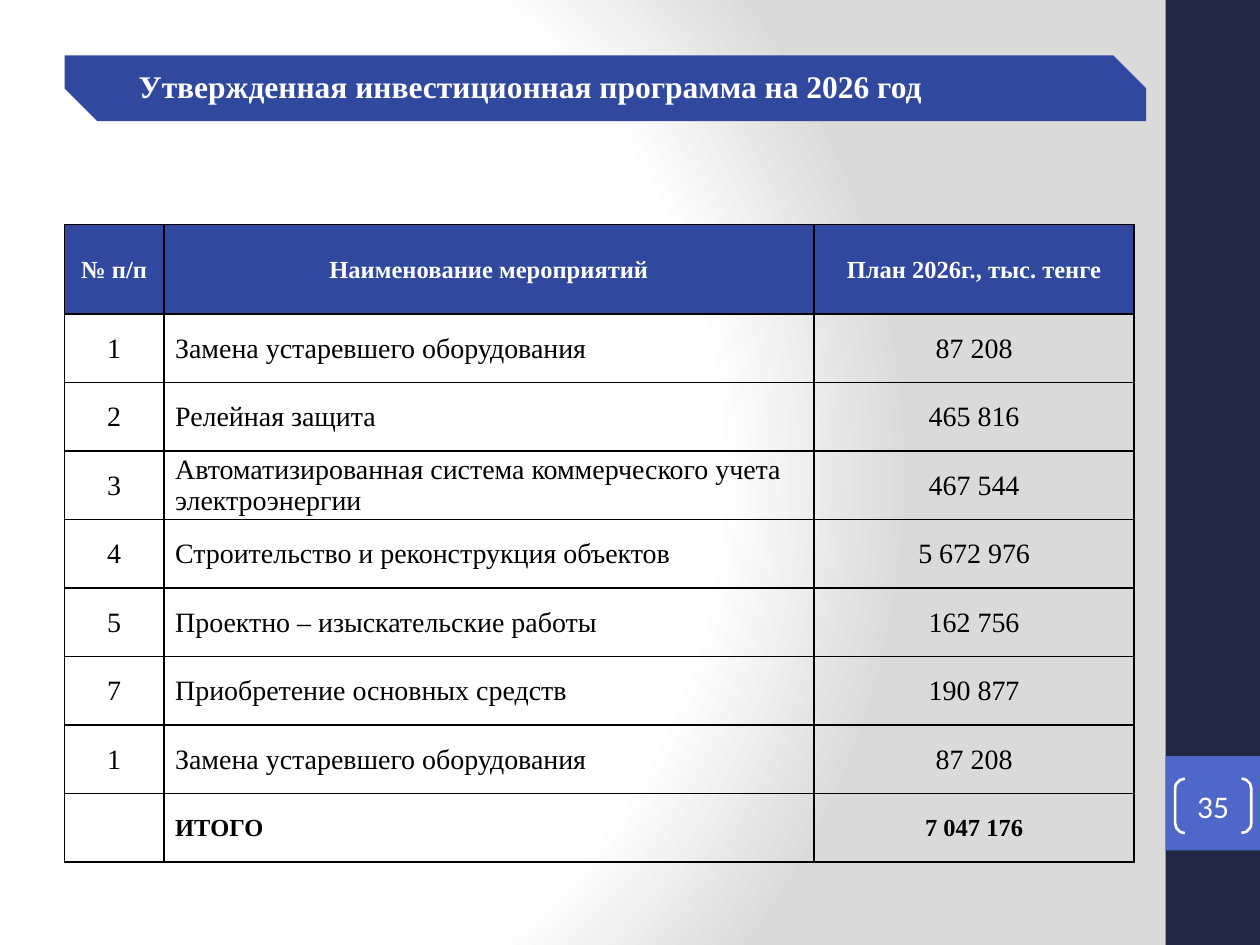
from pptx import Presentation
from pptx.dml.color import RGBColor as Rgb
from pptx.enum.shapes import MSO_SHAPE as Geo
from pptx.enum.text import MSO_ANCHOR as Anchor, PP_ALIGN as Align
from pptx.oxml import parse_xml as to_xml
from pptx.oxml.ns import nsdecls
from pptx.util import Pt

HUES = {"white": "FFFFFF", "gray": "DADADA", "navy": "212745",
        "blue": "4E67C8", "royal": "31489F", "black": "000000"}
SERIF = "Times New Roman"
HEAD = {"name": SERIF, "size": Pt(14), "bold": True, "hue": "white"}
BODY = {"name": SERIF, "size": Pt(16), "bold": False, "hue": "black"}
TOTAL = {**HEAD, "hue": "black"}
TITLE = {**HEAD, "size": Pt(18)}
PAGE = {"name": "Calibri", "size": Pt(18), "hue": "white"}

HEADS = ("№ п/п", "Наименование мероприятий", "План 2026г., тыс. тенге")
WORKS = [
    ("1", "Замена устаревшего оборудования", "87 208"),
    ("2", "Релейная защита", "465 816"),
    ("3", "Автоматизированная система коммерческого учета электроэнергии", "467 544"),
    ("4", "Строительство и реконструкция объектов", "5 672 976"),
    ("5", "Проектно – изыскательские работы", "162 756"),
    ("7", "Приобретение основных средств", "190 877"),
    ("1", "Замена устаревшего оборудования", "87 208"),
]
SUM = ("", "ИТОГО", "7 047 176")


def put(item, vals):
    for key, val in vals.items():
        setattr(item, key, val)


class Deck:
    def __init__(self, wide, high):
        self.prs = Presentation()
        put(self.prs, {"slide_width": Pt(wide), "slide_height": Pt(high)})
        self.slide = self.prs.slides.add_slide(self.prs.slide_layouts[6])

    def ground(self, stops, rect):
        """Fill the background with a circular gradient; rect is in percent."""
        marks = "".join(f'<a:gs pos="{pos * 1000}"><a:srgbClr val="{HUES[hue]}"/></a:gs>'
                        for pos, hue in stops)
        sides = " ".join(f'{side}="{val * 1000}"' for side, val in zip("ltrb", rect))
        self.slide._element.cSld.insert(0, to_xml(
            f'<p:bg {nsdecls("p", "a")}><p:bgPr><a:gradFill rotWithShape="1">'
            f'<a:gsLst>{marks}</a:gsLst><a:path path="circle"><a:fillToRect {sides}/></a:path>'
            '</a:gradFill><a:effectLst/></p:bgPr></p:bg>'))

    def shape(self, geo, box, fill=None, line=None, adj=()):
        item = self.slide.shapes.add_shape(geo, *map(Pt, box))
        item.shadow.inherit = False
        for num, val in enumerate(adj):
            item.adjustments[num] = val
        if fill:
            item.fill.solid()
            item.fill.fore_color.rgb = Rgb.from_string(HUES[fill])
        else:
            item.fill.background()
        if line:
            item.line.color.rgb = Rgb.from_string(HUES[line])
            item.line.width = Pt(1.5)
        else:
            item.line.fill.background()
        return item

    def text(self, frame, words, look, align=Align.CENTER):
        para = frame.paragraphs[0]
        para.alignment = align
        run = para.add_run()
        run.text = words
        put(run.font, {key: val for key, val in look.items() if key != "hue"})
        run.font.color.rgb = Rgb.from_string(HUES[look["hue"]])
        return para

    def label(self, item, words, look, align=Align.CENTER, pad=(0, 0)):
        frame = item.text_frame
        side, edge = map(Pt, pad)
        put(frame, {"word_wrap": True, "vertical_anchor": Anchor.MIDDLE,
                    "margin_left": side, "margin_right": side,
                    "margin_top": edge, "margin_bottom": edge})
        return self.text(frame, words, look, align)

    def cell(self, cell, words, look, left, fill):
        put(cell, {"vertical_anchor": Anchor.MIDDLE, "margin_left": Pt(6.5 if left else 0.7),
                   "margin_right": Pt(0.7), "margin_top": Pt(0.7), "margin_bottom": 0})
        if words:
            self.text(cell.text_frame, words, look, Align.LEFT if left else Align.CENTER)
        props = cell._tc.get_or_add_tcPr()
        for side in "LRTB":
            props.append(to_xml(
                f'<a:ln{side} {nsdecls("a")} w="{Pt(1)}"><a:solidFill>'
                f'<a:srgbClr val="{HUES["black"]}"/></a:solidFill></a:ln{side}>'))
        if fill:
            cell.fill.solid()
            cell.fill.fore_color.rgb = Rgb.from_string(HUES[fill])
        else:
            cell.fill.background()

    def table(self, spot, cols, highs, rows):
        """Draw rows given as (texts, look, fill)."""
        grid = self.slide.shapes.add_table(
            len(rows), len(cols), *map(Pt, (*spot, sum(cols), sum(highs)))).table
        put(grid, {"first_row": False, "horz_banding": False})
        for col, wide in zip(grid.columns, cols):
            col.width = Pt(wide)
        for row, high, (texts, look, fill) in zip(grid.rows, highs, rows):
            row.height = Pt(high)
            for num, words in enumerate(texts):
                self.cell(row.cells[num], words, look, num == 1 and not fill, fill)


def main():
    deck = Deck(720, 540)
    deck.ground([(0, "white"), (75, "white"), (100, "gray")], (20, 50, 100, 50))
    deck.shape(Geo.RECTANGLE, (666, 0, 54, 540), "navy")
    deck.shape(Geo.RECTANGLE, (666, 432, 54, 54), "blue")
    page = deck.shape(Geo.DOUBLE_BRACKET, (671.5, 445, 43.5, 31), line="white", adj=[0.18])
    deck.label(page, "35", PAGE)

    rows = [(HEADS, HEAD, "royal"), *((work, BODY, None) for work in WORKS), (SUM, TOTAL, None)]
    deck.table((36.9, 128.3), (56.7, 371.6, 182.9), [51] + [39.15] * (len(rows) - 1), rows)

    banner = deck.shape(Geo.SNIP_2_DIAG_RECTANGLE, (36.9, 31.7, 618, 37.6), "royal", adj=[0, 0.5])
    title = deck.label(banner, "Утвержденная инвестиционная программа на 2026 год",
                       TITLE, Align.LEFT, (5, 2.9))
    title.line_spacing = 0.9
    title._p.get_or_add_pPr().set("marL", str(Pt(28)))
    deck.prs.save("out.pptx")


if __name__ == "__main__":
    main()
